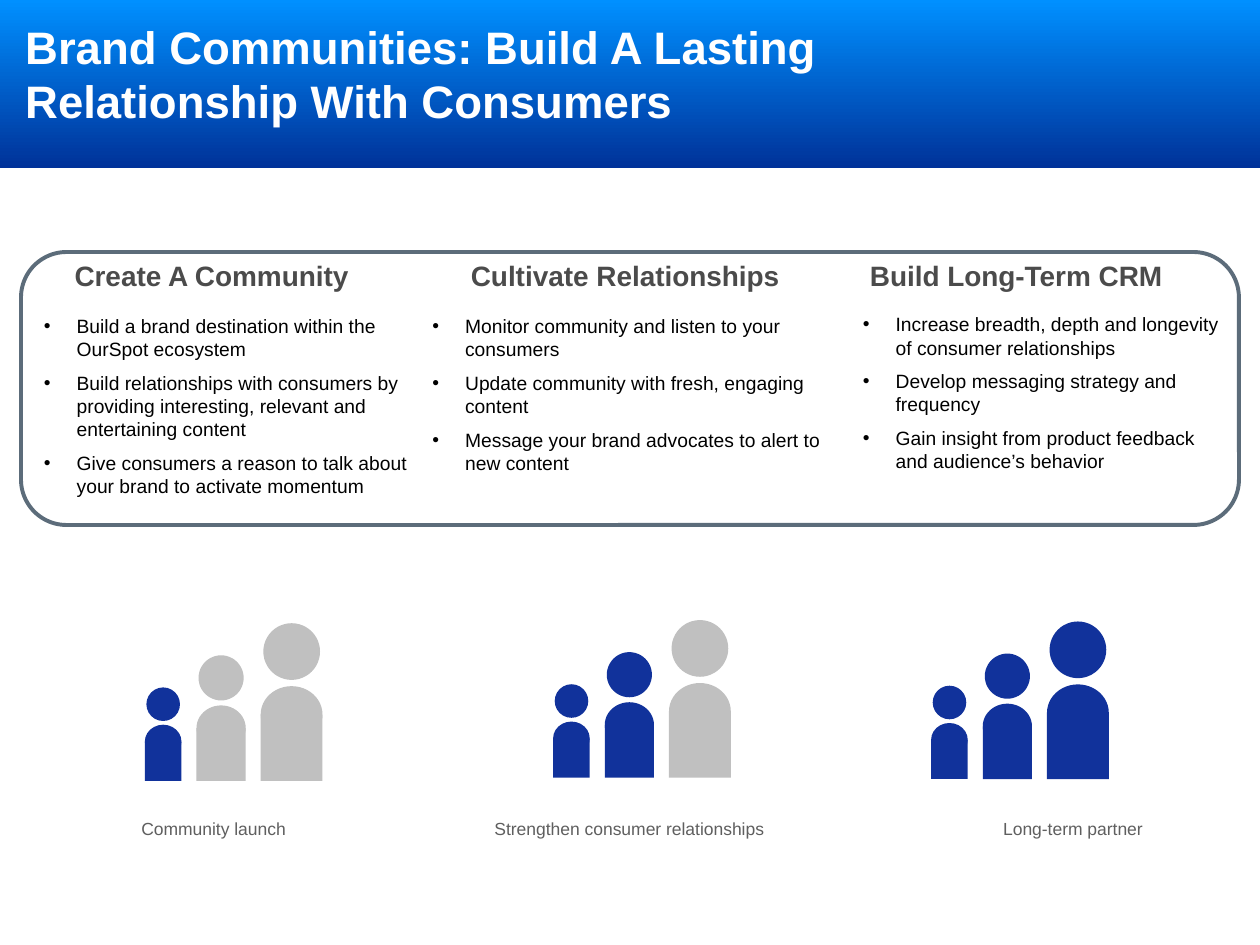
from lxml.etree import SubElement
from pptx import Presentation
from pptx.dml.color import RGBColor
from pptx.enum.shapes import MSO_SHAPE
from pptx.enum.text import MSO_ANCHOR, PP_ALIGN
from pptx.oxml.ns import qn
from pptx.util import Pt

WHITE = RGBColor(0xFF, 0xFF, 0xFF)
BLACK = RGBColor(0, 0, 0)
SKY = RGBColor(0x00, 0x90, 0xFF)
NAVY = RGBColor(0x00, 0x32, 0x99)
BLUE = RGBColor(0x11, 0x32, 0x9B)
GREY = RGBColor(0xC0, 0xC0, 0xC0)
SLATE = RGBColor(0x5C, 0x6C, 0x7A)
DARK = RGBColor(0x4B, 0x4B, 0x4B)
DIM = RGBColor(0x5F, 0x5F, 0x5F)

TITLE = "Brand Communities: Build A Lasting Relationship With Consumers"
COLUMNS = [
    {"head": "Create A Community", "box": (0, 144, 240, 144), "indent": 35.5, "gap": 13,
     "items": ["Build a brand destination within the OurSpot ecosystem",
               "Build relationships with consumers by providing interesting, "
               "relevant and entertaining content",
               "Give consumers a reason to talk about your brand to activate momentum"]},
    {"head": "Cultivate Relationships", "box": (222, 144, 258, 127), "indent": 40, "gap": 13,
     "items": ["Monitor community and listen to your consumers",
               "Update community with fresh, engaging content",
               "Message your brand advocates to alert to new content"]},
    {"head": "Build Long-Term CRM", "box": (468, 144, 240, 150), "indent": 22, "gap": 12,
     "items": ["Increase breadth, depth and longevity of consumer relationships",
               "Develop messaging strategy and frequency",
               "Gain insight from product feedback and audience’s behavior"]},
]
GROUPS = [(82.8, 446.2), (316.1, 444.4), (532.1, 445.2)]
PEOPLE = [(0, 19.2), (29.5, 25.8), (66.2, 32.4)]
CAPTIONS = [
    ("Community launch", (60, 463.8, 124, 19.4), PP_ALIGN.CENTER),
    ("Strengthen consumer relationships", (263.5, 463.8, 192, 19.4), PP_ALIGN.CENTER),
    ("Long-term partner", (468, 463.8, 192, 19.4), PP_ALIGN.RIGHT),
]

TITLE_FONT = {"name": "Arial", "size": Pt(26), "bold": True}
HEAD_FONT = {"name": "Arial", "size": Pt(16), "bold": True}
ITEM_FONT = {"name": "Arial", "size": Pt(11), "bold": False}
NOTE_FONT = {"name": "Arial", "size": Pt(10), "bold": False}


def style(para, form, color):
    for key, value in form.items():
        setattr(para.font, key, value)
    para.font.color.rgb = color


def place(box):
    return [Pt(round(n, 2)) for n in box]


def shape(kind, box, color=None):
    item = slide.shapes.add_shape(kind, *place(box))
    item.shadow.inherit = False
    item.line.fill.background()
    if color is None:
        item.fill.background()
    else:
        item.fill.solid()
        item.fill.fore_color.rgb = color
    return item


def text(box):
    frame = slide.shapes.add_textbox(*place(box)).text_frame
    frame.word_wrap = True
    return frame


def bullet(para):
    props = para._p.get_or_add_pPr()
    props.set("marL", str(Pt(36.7)))
    props.set("indent", str(-Pt(18.7)))
    SubElement(props, qn("a:buFont"), typeface="Arial")
    SubElement(props, qn("a:buChar"), char="•")


def person(left, base, size, color):
    wide = 1.09 * size
    top = base - 2.78 * size
    shape(MSO_SHAPE.OVAL, (left + (wide - size) / 2, top, size, size), color)
    shape(MSO_SHAPE.OVAL, (left, top + 1.11 * size, wide, size), color)
    shape(MSO_SHAPE.RECTANGLE, (left, top + 1.61 * size, wide, 1.17 * size), color)


deck = Presentation()
deck.slide_width, deck.slide_height = Pt(720), Pt(540)
slide = deck.slides.add_slide(deck.slide_layouts[5])

title = slide.shapes.title
title.left, title.top, title.width, title.height = place((7.2, 7.2, 533, 78))
title.text_frame.text = TITLE
title.text_frame.word_wrap = True
title.text_frame.vertical_anchor = MSO_ANCHOR.TOP
title.text_frame.paragraphs[0].alignment = PP_ALIGN.LEFT
style(title.text_frame.paragraphs[0], TITLE_FONT, WHITE)

band = shape(MSO_SHAPE.RECTANGLE, (0, 0, 720, 96), SKY)
band.fill.gradient()
band.fill.gradient_angle = 270
for stop, color, spot in zip(band.fill.gradient_stops, (SKY, NAVY), (0, 1)):
    stop.color.rgb = color
    stop.position = spot
title.element.addprevious(band.element)

for num, (left, base) in enumerate(GROUPS):
    for rank, (shift, size) in enumerate(PEOPLE):
        person(left + shift, base, size, BLUE if rank <= num else GREY)

for col in COLUMNS:
    frame = text(col["box"])
    head = frame.paragraphs[0]
    head.text = col["head"]
    head._p.get_or_add_pPr().set("marL", str(Pt(col["indent"])))
    style(head, HEAD_FONT, DARK)
    for num, line in enumerate(col["items"]):
        para = frame.add_paragraph()
        para.text = line
        bullet(para)
        para.space_before = Pt(6 if num else col["gap"])
        style(para, ITEM_FONT, BLACK)

frame = shape(MSO_SHAPE.ROUNDED_RECTANGLE, (12, 144, 696, 156))
frame.line.color.rgb = SLATE
frame.line.width = Pt(2.25)

for words, box, align in CAPTIONS:
    para = text(box).paragraphs[0]
    para.text = words
    para.alignment = align
    style(para, NOTE_FONT, DIM)

deck.save("out.pptx")
